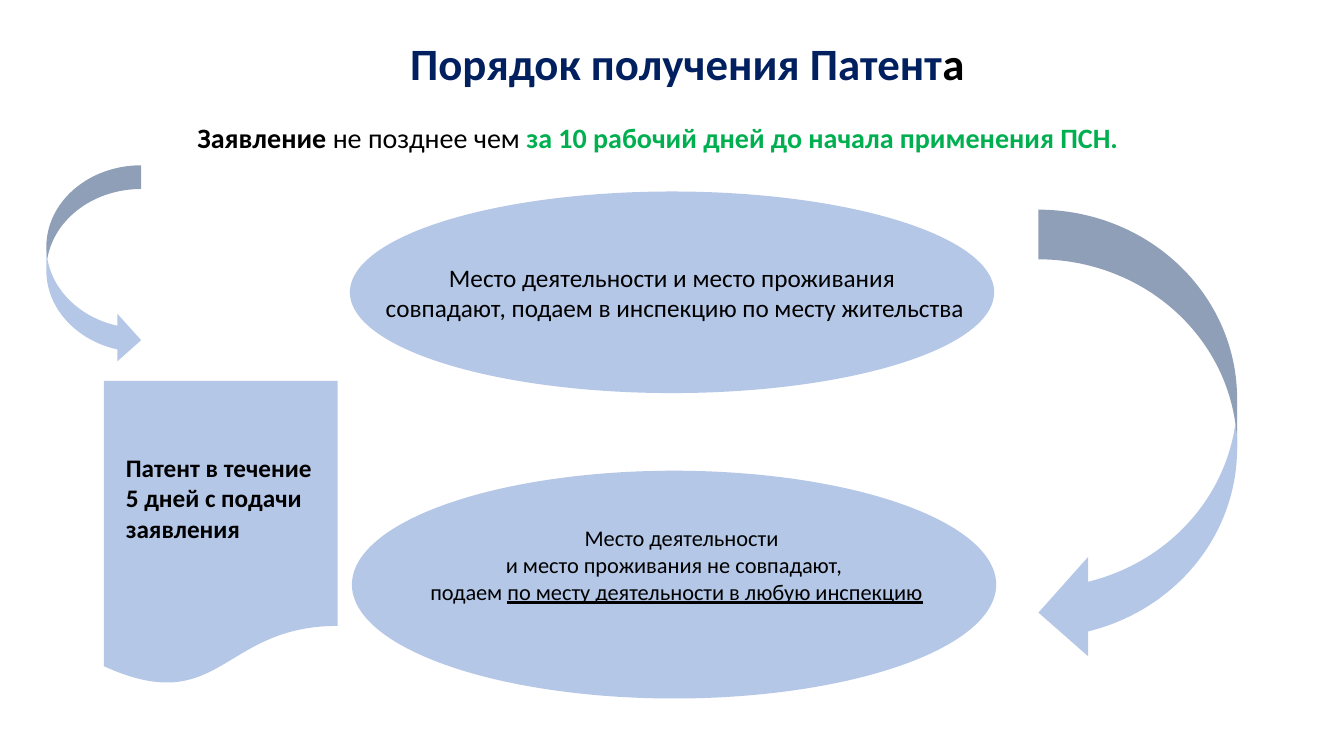
from dataclasses import dataclass
from pptx import Presentation
from pptx.dml.color import RGBColor as Rgb
from pptx.enum.shapes import MSO_SHAPE as Kind
from pptx.enum.text import MSO_ANCHOR as Anchor, MSO_AUTO_SIZE as Fit, PP_ALIGN as Align
from pptx.util import Inches, Pt


@dataclass(frozen=True)
class Theme:
    font: str = "Calibri"
    navy: str = "002060"
    green: str = "00B050"
    black: str = "000000"
    pale: str = "B4C7E7"
    title: int = 32
    lead: int = 20
    body: int = 18
    small: int = 16


theme = Theme()


def write(shape, size, lines, align=Align.LEFT):
    frame = shape.text_frame
    for i, line in enumerate(lines):
        para = frame.add_paragraph() if i else frame.paragraphs[0]
        para.alignment = align
        for text, color, bold, under in line:
            run = para.add_run()
            run.text = text
            run.font.name = theme.font
            run.font.size = Pt(size)
            run.font.color.rgb = Rgb.from_string(color)
            run.font.bold = bold
            run.font.underline = under
    return frame


def draw(kind, *box):
    shape = slide.shapes.add_shape(kind, *map(Inches, box))
    shape.shadow.inherit = False
    shape.fill.solid()
    shape.fill.fore_color.rgb = Rgb.from_string(theme.pale)
    shape.line.fill.background()
    return shape


deck = Presentation()
deck.slide_width, deck.slide_height = Inches(13.33), Inches(7.5)
slide = deck.slides.add_slide(deck.slide_layouts[6])

heads = [
    ((3.97, 0.31, 5.83, 0.64), theme.title, Align.LEFT, [
        ("Порядок получения Патент", theme.navy, True, False),
        ("а", theme.black, True, False),
    ]),
    ((1.86, 1.15, 11.27, 0.44), theme.lead, Align.JUSTIFY, [
        ("Заявление ", theme.black, True, False),
        ("не позднее чем ", theme.black, False, False),
        ("за 10 рабочий дней до начала применения ПСН. ", theme.green, True, False),
    ]),
]
for box, size, align, line in heads:
    label = slide.shapes.add_textbox(*map(Inches, box))
    frame = write(label, size, [line], align)
    frame.word_wrap = True
    frame.auto_size = Fit.SHAPE_TO_FIT_TEXT

draw(Kind.CURVED_LEFT_ARROW, 10.3, 2.08, 1.97, 4.49)
draw(Kind.CURVED_RIGHT_ARROW, 0.46, 1.64, 0.94, 1.97)

same = draw(Kind.OVAL, 3.47, 1.9, 6.39, 2)
other = draw(Kind.OVAL, 3.49, 4.67, 6.39, 2.26)
cases = [
    (same, theme.body, [
        [("Место деятельности и место проживания", theme.black, False, False)],
        [(" совпадают, подаем в инспекцию по месту жительства", theme.black, False, False)],
    ]),
    (other, theme.small, [
        [("Место деятельности", theme.black, False, False)],
        [("и место проживания не совпадают,", theme.black, False, False)],
        [(" подаем ", theme.black, False, False),
         ("по месту деятельности в любую инспекцию", theme.black, False, True)],
    ]),
]
for oval, size, lines in cases:
    frame = write(oval, size, lines, Align.CENTER)
    frame.word_wrap = False
    frame.vertical_anchor = Anchor.MIDDLE
other.text_frame.margin_bottom = Inches(0.45)
first = other.text_frame.paragraphs[0]
first._p.get_or_add_pPr().set("marL", str(Inches(0.15)))

draw(Kind.FLOWCHART_DOCUMENT, 1.03, 3.78, 2.32, 3.03)
term = draw(Kind.RECTANGLE, 1.15, 4.44, 2.07, 1.01)
frame = write(term, theme.body, [
    [("Патент в течение 5 дней с подачи", theme.black, True, False)],
    [("заявления", theme.black, True, False)],
])
frame.word_wrap = True
frame.vertical_anchor = Anchor.TOP
frame.auto_size = Fit.SHAPE_TO_FIT_TEXT

deck.save("out.pptx")
